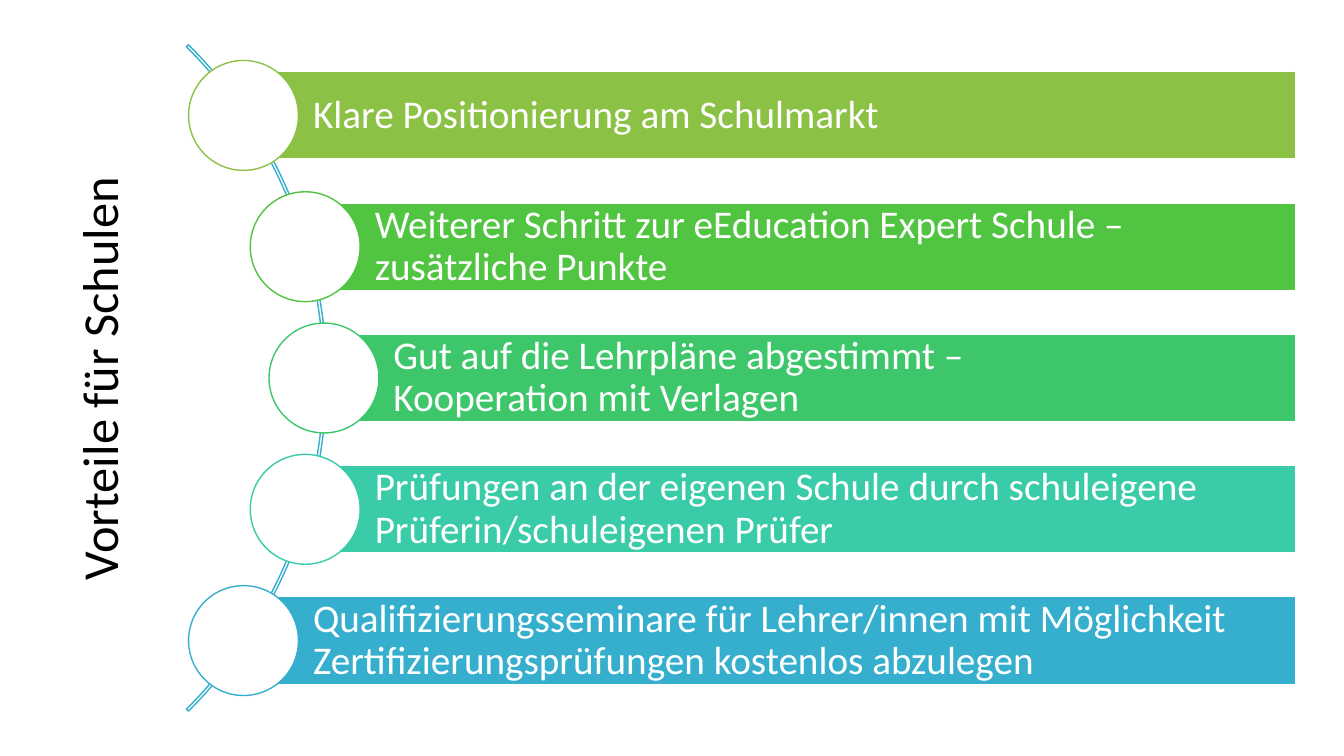
from dataclasses import dataclass
from math import sqrt

from pptx import Presentation
from pptx.dml.color import RGBColor as Rgb
from pptx.enum.shapes import MSO_SHAPE as Shape
from pptx.enum.text import MSO_ANCHOR as Anchor, MSO_AUTO_SIZE as AutoSize, PP_ALIGN as Align
from pptx.util import Inches, Pt


@dataclass(frozen=True)
class Theme:
    font: str = "Calibri"
    title_size: int = 36
    bar_size: int = 28
    black: str = "000000"
    white: str = "FFFFFF"
    accents: tuple = ("8BC145", "51C441", "3EC76A", "3ACBA8", "36AFCE")


THEME = Theme()
TITLE = "Vorteile für Schulen"
BENEFITS = (
    "Klare Positionierung am Schulmarkt",
    "Weiterer Schritt zur eEducation Expert Schule – zusätzliche Punkte",
    "Gut auf die Lehrpläne abgestimmt – \vKooperation mit Verlagen",
    "Prüfungen an der eigenen Schule durch schuleigene Prüferin/schuleigenen Prüfer",
    "Qualifizierungsseminare für Lehrer/innen mit Möglichkeit "
    "Zertifizierungsprüfungen kostenlos abzulegen",
)


def set_all(target, values):
    for name, value in values.items():
        setattr(target, name, value)


def write_text(shape, text, size, color, align, frame_format):
    frame = shape.text_frame
    frame.text = text
    set_all(frame, {"word_wrap": True, "auto_size": AutoSize.NONE,
                    "vertical_anchor": Anchor.MIDDLE, **frame_format})
    para = frame.paragraphs[0]
    set_all(para, {"alignment": align, "line_spacing": 0.9})
    for span in para.runs:
        set_all(span.font, {"name": THEME.font, "size": Pt(size), "bold": False})
        span.font.color.rgb = Rgb.from_string(color)


def add_outlined(page, kind, box, line, fill=None):
    shape = page.shapes.add_shape(kind, *map(Inches, box))
    shape.shadow.inherit = False
    if fill:
        shape.fill.solid()
        shape.fill.fore_color.rgb = Rgb.from_string(fill)
    else:
        shape.fill.background()
    shape.line.color.rgb = Rgb.from_string(line)
    shape.line.width = Pt(1)
    return shape


def place_title(page, box):
    """Title turned to read upwards; the box is given before turning."""
    title = page.shapes.title
    set_all(title, dict(zip(("left", "top", "width", "height"), map(Inches, box))))
    title.rotation = 270
    write_text(title, TITLE, THEME.title_size, THEME.black, Align.CENTER, {})


def add_benefits(page, box):
    """Bars start on an arc that bulges to the right inside the box."""
    left, top, width, height = box
    diameter, bar_height, radius = 1.09, 0.87, 4.65
    pitch = (height - diameter) / (len(BENEFITS) - 1)
    center_y = top + height / 2
    half_span = center_y - top - diameter / 2
    center_x = left + diameter / 2 - sqrt(radius**2 - half_span**2)

    # Arc
    outer = radius + 0.025
    arc = add_outlined(page, Shape.BLOCK_ARC,
                       (center_x - outer, center_y - outer, 2 * outer, 2 * outer),
                       THEME.accents[-1])
    for index, value in enumerate((189, 27, 0.003)):
        arc.adjustments[index] = value

    # Bars and circles
    insets = {"margin_left": Inches(0.69), "margin_right": Inches(0.08),
              "margin_top": Inches(0.08), "margin_bottom": Inches(0.08)}
    for row, (text, accent) in enumerate(zip(BENEFITS, THEME.accents)):
        y = top + diameter / 2 + row * pitch
        x = center_x + sqrt(radius**2 - (y - center_y)**2)
        bar = add_outlined(page, Shape.RECTANGLE,
                           (x, y - bar_height / 2, left + width - x, bar_height),
                           THEME.white, accent)
        write_text(bar, text, THEME.bar_size, THEME.white, Align.LEFT, insets)
        add_outlined(page, Shape.OVAL,
                     (x - diameter / 2, y - diameter / 2, diameter, diameter),
                     accent, THEME.white)


def main():
    deck = Presentation()
    set_all(deck, {"slide_width": Inches(13.33), "slide_height": Inches(7.5)})
    page = deck.slides.add_slide(deck.slide_layouts[5])
    add_benefits(page, (1.87, 0.6, 10.98, 6.3))
    place_title(page, (-2.74, 3.4, 7.5, 0.71))
    deck.save("out.pptx")


if __name__ == "__main__":
    main()
